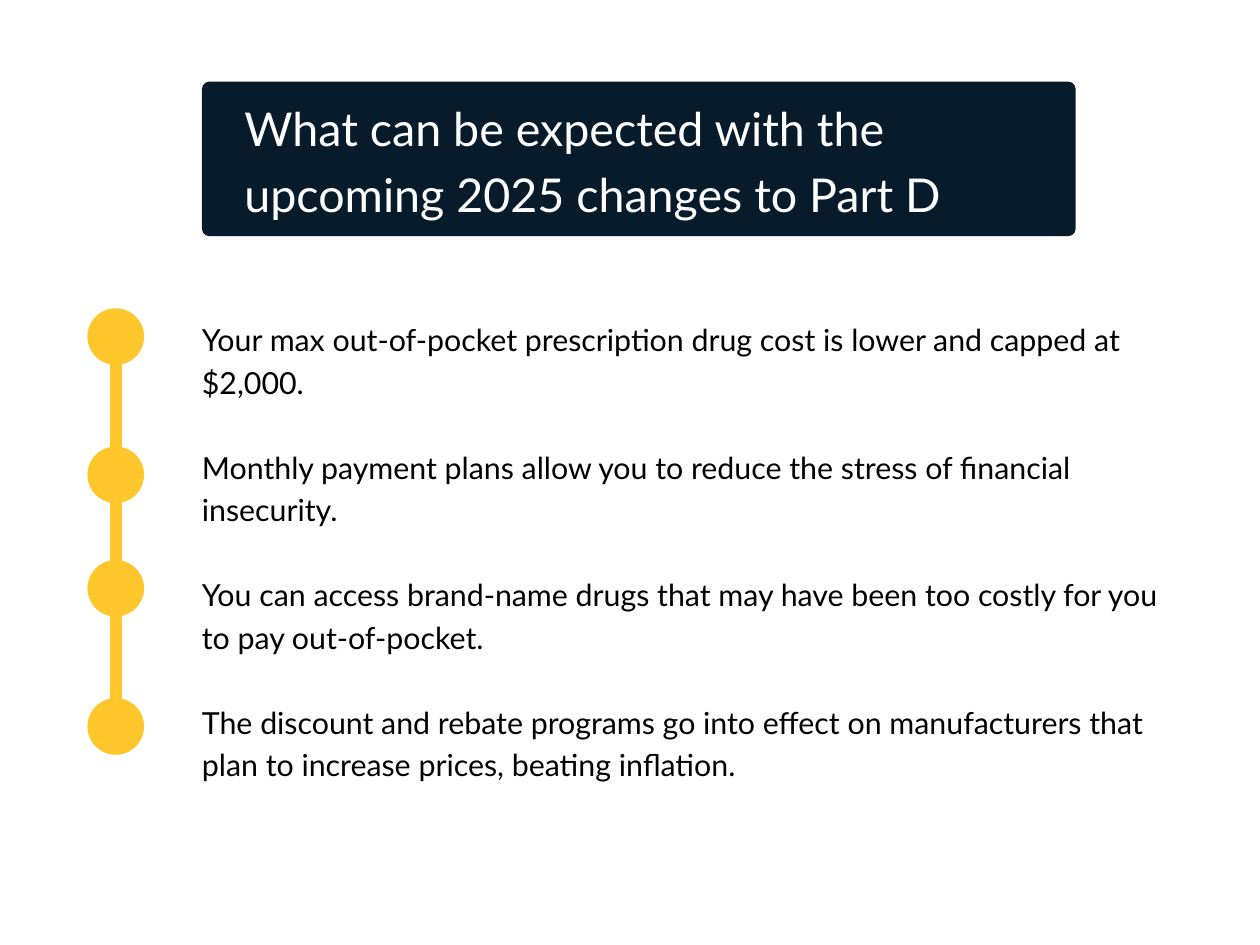
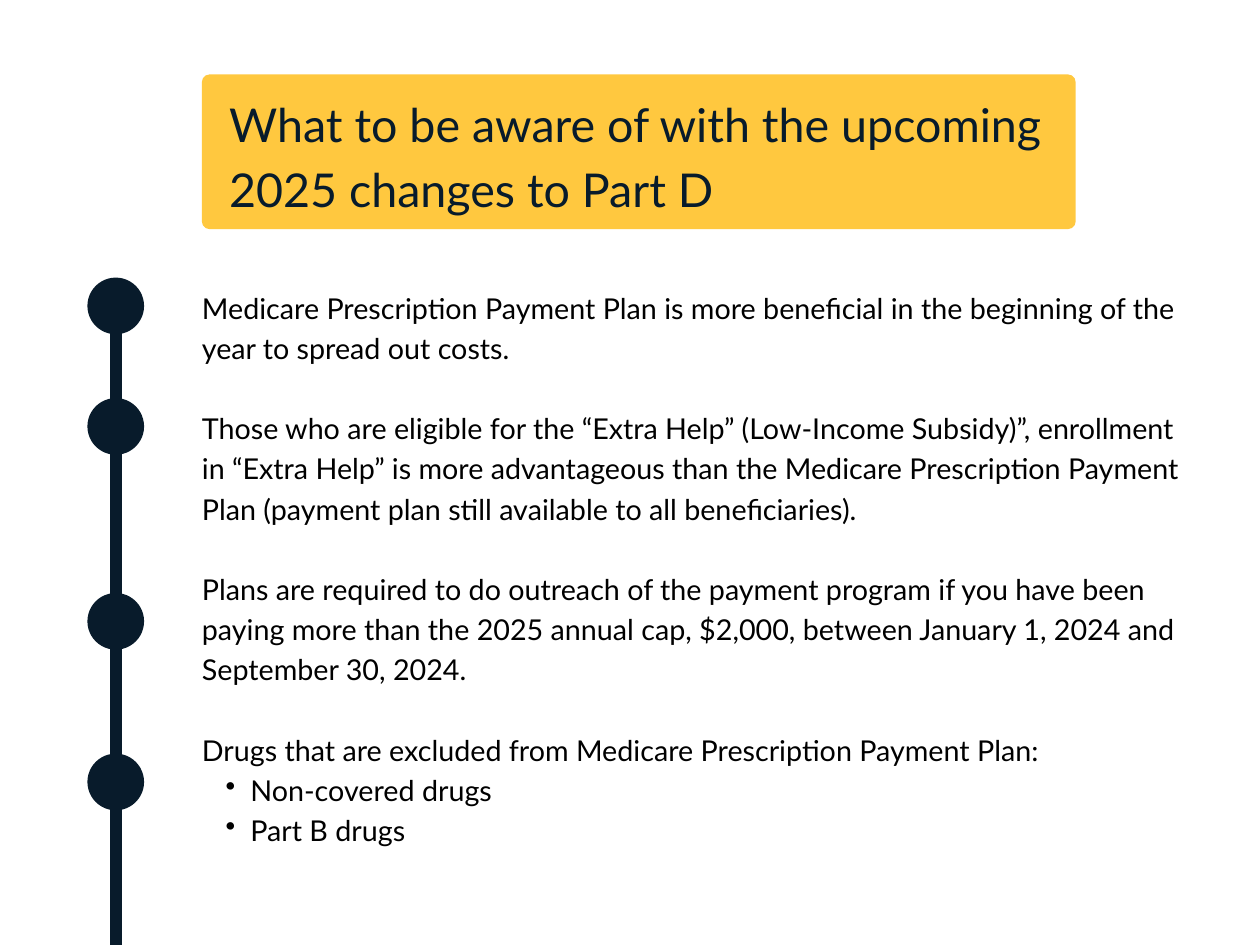
from lxml import etree
from pptx import Presentation
from pptx.dml.color import RGBColor
from pptx.enum.shapes import MSO_CONNECTOR, MSO_SHAPE
from pptx.oxml.ns import qn
from pptx.util import Inches, Pt

STRAIGHT = MSO_CONNECTOR.STRAIGHT
OVAL = MSO_SHAPE.OVAL
ROUNDED = MSO_SHAPE.ROUNDED_RECTANGLE

COLORS = {
    "navy": "081B2B",
    "gold": "FFC72C",
    "banner_gold": "FFC83F",
    "white": "FFFFFF",
    "black": "000000",
}
FONT = "Lato"
CONTENT_LEFT = 1.71
BANNER_SIZE = (7.4, 1.31)
TIMELINE_X = 0.98
DOT_SIZE = 0.48

EXPECTATIONS = [
    ["Your max out-of-pocket prescription drug cost is lower and capped at $2,000."],
    ["Monthly payment plans allow you to reduce the stress of financial insecurity."],
    ["You can access brand-name drugs that may have been too costly for you "
     "to pay out-of-pocket."],
    ["The discount and rebate programs go into effect on manufacturers that "
     "plan to increase prices, beating inflation."],
]
CAUTIONS = [
    ["Medicare Prescription Payment Plan is more beneficial in the beginning of "
     "the year to spread out costs."],
    ["Those who are eligible for the “Extra Help” (Low-Income Subsidy)”, "
     "enrollment in “Extra Help” is more advantageous than the Medicare "
     "Prescription Payment Plan (payment plan still available to all beneficiaries)."],
    ["Plans are required to do outreach of the payment program if you have been "
     "paying more than the 2025 annual cap, $2,000, between January 1, 2024 and "
     "September 30, 2024."],
    ["Drugs that are excluded from Medicare Prescription Payment Plan:",
     "Non-covered drugs",
     "Part B drugs"],
]


def rgb(color):
    """Return the named colour."""
    return RGBColor.from_string(COLORS[color])


def add_filled(slide, preset, left, top, width, height, color):
    """Add a flat preset shape without an outline."""
    shape = slide.shapes.add_shape(
        preset, Inches(left), Inches(top), Inches(width), Inches(height))
    shape.shadow.inherit = False
    shape.fill.solid()
    shape.fill.fore_color.rgb = rgb(color)
    shape.line.fill.background()
    return shape


def add_frame(slide, left, top, width, height):
    """Add a wrapping text box without margins and return its text frame."""
    frame = slide.shapes.add_textbox(
        Inches(left), Inches(top), Inches(width), Inches(height)).text_frame
    frame.word_wrap = True
    frame.margin_left = frame.margin_top = 0
    frame.margin_right = frame.margin_bottom = 0
    return frame


def write(paragraph, text, *, size, leading, color="black", before=0, bullet=False):
    """Fill a paragraph with formatted text."""
    if bullet:
        paragraph.level = 1
        properties = paragraph._p.get_or_add_pPr()
        properties.set("marL", str(Inches(0.41)))
        properties.set("indent", str(Inches(-0.21)))
        etree.SubElement(properties, qn("a:buChar")).set("char", "•")
    paragraph.line_spacing = Pt(leading)
    if before:
        paragraph.space_before = Pt(before)
    run = paragraph.add_run()
    run.text = text
    run.font.name = FONT
    run.font.size = Pt(size)
    run.font.color.rgb = rgb(color)


def add_banner(slide, title, top, fill, color, title_box):
    """Add the rounded title band and its heading."""
    band = add_filled(slide, ROUNDED, CONTENT_LEFT, top, *BANNER_SIZE, fill)
    band.adjustments[0] = 0.05
    frame = add_frame(slide, *title_box)
    write(frame.paragraphs[0], title, size=28.4, leading=39.8, color=color)


def add_timeline(slide, start, end, dot_tops, color):
    """Add a vertical rule with a dot for each topic."""
    rule = slide.shapes.add_connector(
        STRAIGHT, Inches(TIMELINE_X), Inches(end), Inches(TIMELINE_X), Inches(start))
    rule.line.color.rgb = rgb(color)
    rule.line.width = Pt(7.5)
    etree.SubElement(rule._element.spPr, qn("a:effectLst"))
    for top in dot_tops:
        add_filled(slide, OVAL, TIMELINE_X - DOT_SIZE / 2, top,
                   DOT_SIZE, DOT_SIZE, color)


def add_topics(slide, topics, top, width, height, size, leading):
    """Write the topics one line apart, each followed by its bullets."""
    frame = add_frame(slide, CONTENT_LEFT, top, width, height)
    paragraph = frame.paragraphs[0]
    for index, (statement, *details) in enumerate(topics):
        if index:
            paragraph = frame.add_paragraph()
        write(paragraph, statement, size=size, leading=leading,
              before=leading if index else 0)
        for detail in details:
            write(frame.add_paragraph(), detail, size=size, leading=leading,
                  bullet=True)


def main():
    """Build and save the two slides."""
    deck = Presentation()
    deck.slide_width, deck.slide_height = Inches(10.67), Inches(8)
    blank = deck.slide_layouts[6]

    expected = deck.slides.add_slide(blank)
    add_timeline(expected, 2.7, 6.17, [2.61, 3.78, 4.74, 5.91], "gold")
    add_topics(expected, EXPECTATIONS, 2.67, 8.29, 3.99, size=18.5, leading=25.9)
    add_banner(expected, "What can be expected with the upcoming 2025 changes to Part D",
               0.69, "navy", "white", (2.07, 0.77, 6.65, 1.06))

    aware = deck.slides.add_slide(blank)
    add_topics(aware, CAUTIONS, 2.41, 8.42, 5.32, size=17.5, leading=24.5)
    add_timeline(aware, 2.44, 8, [2.35, 3.37, 5.02, 6.38], "navy")
    add_banner(aware, "What to be aware of with the upcoming 2025 changes to Part D",
               0.63, "banner_gold", "navy", (1.94, 0.73, 6.94, 1.06))

    deck.save("out.pptx")


if __name__ == "__main__":
    main()
